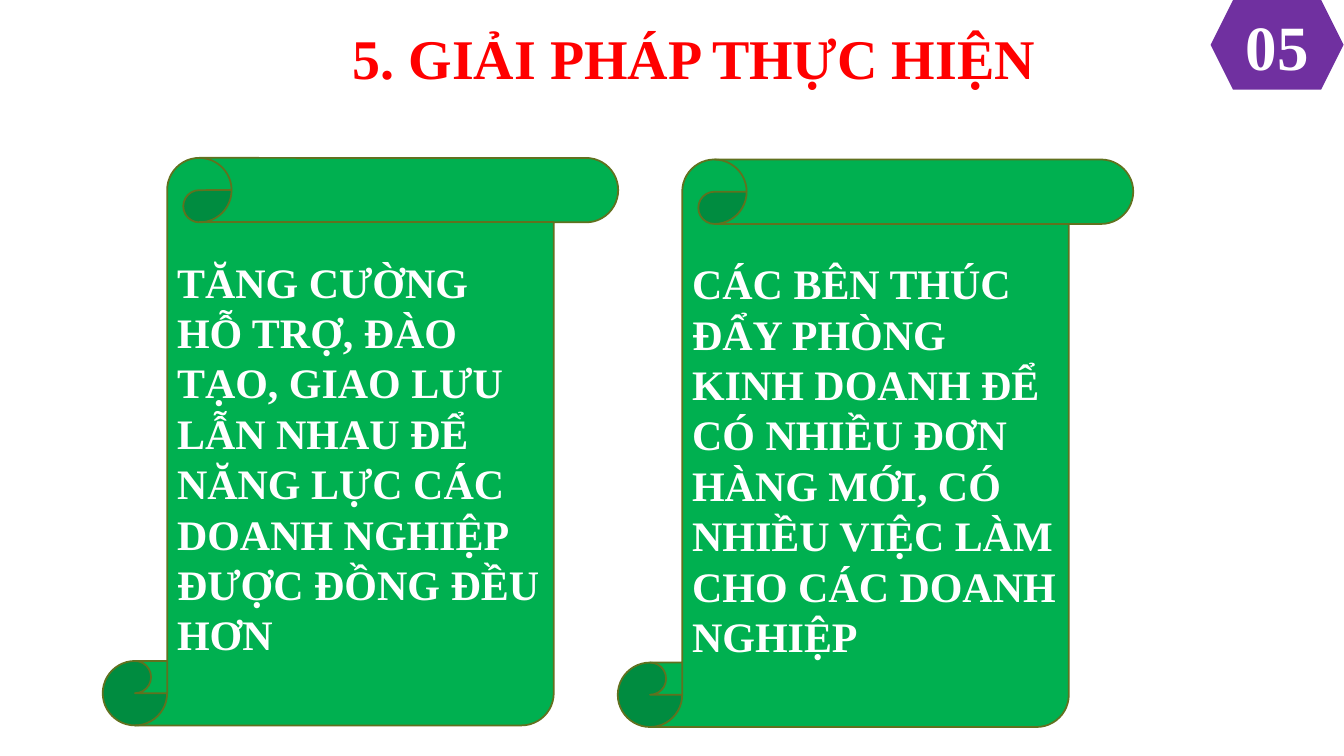
from pptx import Presentation
from pptx.dml.color import RGBColor
from pptx.enum import shapes, text
from pptx.util import Cm, Pt

RED = RGBColor(0xFF, 0x00, 0x00)
PURPLE = RGBColor(0x70, 0x30, 0xA0)
GREEN = RGBColor(0x00, 0xB0, 0x50)
OLIVE = RGBColor(0x61, 0x71, 0x1F)
WHITE = RGBColor(0xFF, 0xFF, 0xFF)
FONT = "Times New Roman"

SCROLL_SIZE = (Cm(12.99), Cm(14.3))
SCROLLS = [
    (2.59, 3.98, "TĂNG CƯỜNG HỖ TRỢ, ĐÀO TẠO, GIAO LƯU LẪN NHAU ĐỂ "
                 "NĂNG LỰC CÁC DOANH NGHIỆP ĐƯỢC ĐỒNG ĐỀU HƠN"),
    (15.57, 4.02, "CÁC BÊN THÚC ĐẨY PHÒNG KINH DOANH ĐỂ CÓ NHIỀU ĐƠN HÀNG MỚI, "
                  "CÓ NHIỀU VIỆC LÀM CHO CÁC DOANH NGHIỆP"),
]


def write(shape, wording, size, color=WHITE, align=text.PP_ALIGN.LEFT,
          anchor=text.MSO_ANCHOR.MIDDLE, spacing=None, wrap=True):
    frame = shape.text_frame
    frame.word_wrap = wrap
    frame.vertical_anchor = anchor
    paragraph = frame.paragraphs[0]
    paragraph.alignment = align
    paragraph.line_spacing = spacing
    run = paragraph.add_run()
    run.text = wording
    run.font.name = FONT
    run.font.size = Pt(size)
    run.font.bold = True
    run.font.color.rgb = color


def add_filled(slide, kind, left, top, width, height, fill, outline=None):
    shape = slide.shapes.add_shape(kind, left, top, width, height)
    shape.shadow.inherit = False
    shape.fill.solid()
    shape.fill.fore_color.rgb = fill
    if outline is None:
        shape.line.fill.background()
    else:
        shape.line.color.rgb = outline
        shape.line.width = Pt(1.25)
    return shape


def add_heading(slide, wording):
    heading = slide.shapes.add_textbox(Cm(2.24), Cm(0.79), Cm(30.5), Cm(2.79))
    write(heading, wording, 40, color=RED, align=text.PP_ALIGN.CENTER,
          anchor=text.MSO_ANCHOR.TOP, spacing=0.8)


def add_section_number(slide, number):
    badge = add_filled(slide, shapes.MSO_SHAPE.HEXAGON,
                       Cm(30.51), Cm(0), Cm(3.35), Cm(2.26), PURPLE)
    write(badge, number, 45, align=text.PP_ALIGN.CENTER, wrap=False)


def add_solution(slide, left, top, wording):
    scroll = add_filled(slide, shapes.MSO_SHAPE.VERTICAL_SCROLL,
                        Cm(left), Cm(top), *SCROLL_SIZE, GREEN, OLIVE)
    write(scroll, wording, 30)


def main():
    deck = Presentation()
    deck.slide_width, deck.slide_height = Cm(33.87), Cm(19.05)
    slide = deck.slides.add_slide(deck.slide_layouts[6])

    # Heading and section number
    add_heading(slide, "5. GIẢI PHÁP THỰC HIỆN")
    add_section_number(slide, "05")

    # Solutions on scrolls
    for left, top, wording in SCROLLS:
        add_solution(slide, left, top, wording)

    deck.save("out.pptx")


if __name__ == "__main__":
    main()
